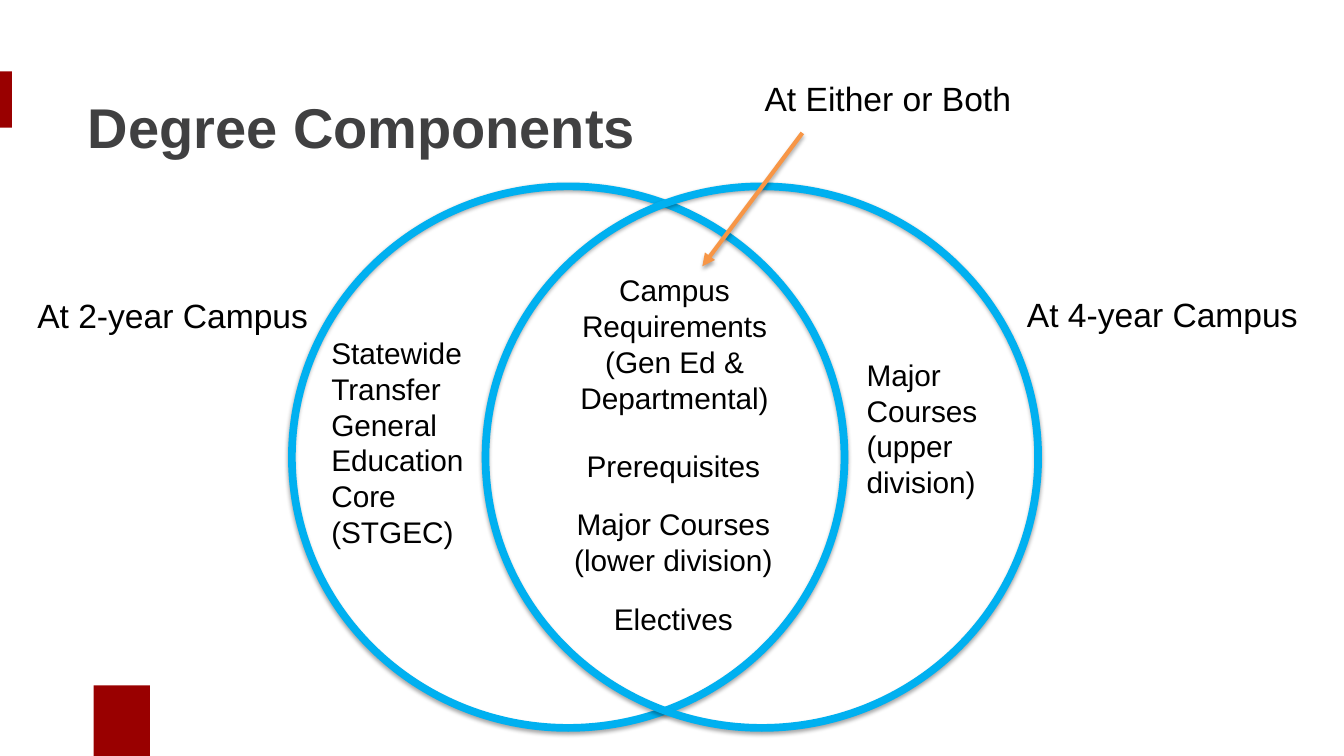
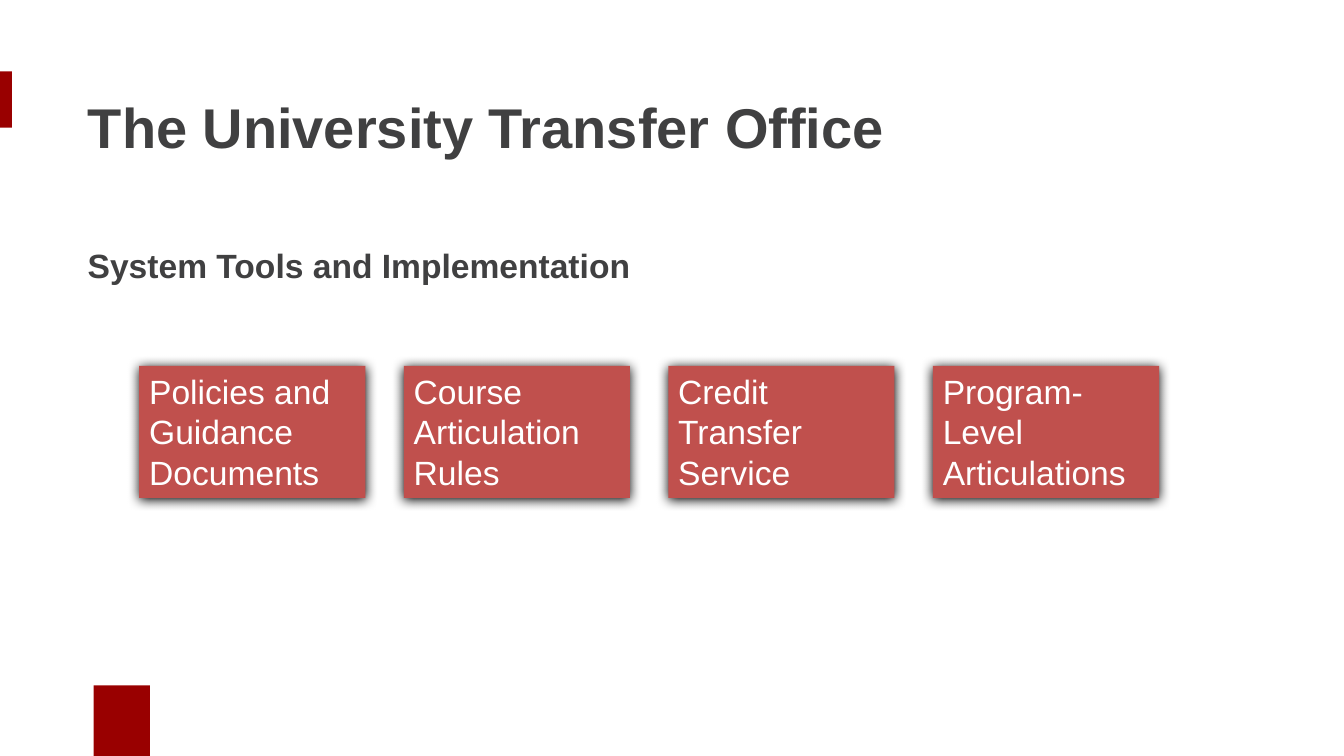
from lxml import etree
from pptx import Presentation
from pptx.dml.color import RGBColor
from pptx.enum import shapes, text
from pptx.oxml import ns
from pptx.util import Cm, Pt

COLORS = {
    "band": "990000",
    "heading": "404041",
    "body": "000000",
    "ring": "00B0F0",
    "arrow": "F79646",
    "tool": "C0504D",
    "tool_text": "FFFFFF",
    "shadow": "000000",
}
FONT = "Arial"
TITLE_ONLY = 5
BODY_SIZE, LABEL_SIZE, TITLE_SIZE = 21.3, 24, 40
SOFT_SHADOW = {"opacity": 35, "blur": 3.1, "distance": 1.8}
STRONG_SHADOW = {"opacity": 100, "blur": 8.5, "distance": 1}


def rgb(name):
    return RGBColor.from_string(COLORS[name])


def add_xml(parent, tag, **attributes):
    values = {key: str(value) for key, value in attributes.items()}
    return etree.SubElement(parent, ns.qn(tag), values)


def cast_shadow(shape, opacity, blur, distance):
    """Add a downward shadow; call after fill and line are set."""
    effects = add_xml(shape.element.spPr, "a:effectLst")
    outer = add_xml(effects, "a:outerShdw", blurRad=Pt(blur), dist=Pt(distance),
                    dir=90 * 60000, rotWithShape=0)
    color = add_xml(outer, "a:srgbClr", val=COLORS["shadow"])
    add_xml(color, "a:alpha", val=opacity * 1000)


def write(frame, content, size, color, bold=False, centered=False, gap=0,
          anchor=text.MSO_ANCHOR.TOP):
    """Set text; paragraphs are split by newlines, with gap points between them."""
    frame.text = content
    frame.auto_size = text.MSO_AUTO_SIZE.NONE
    frame.vertical_anchor = anchor
    for number, paragraph in enumerate(frame.paragraphs):
        paragraph.alignment = text.PP_ALIGN.CENTER if centered else text.PP_ALIGN.LEFT
        paragraph.space_before = Pt(gap if number else 0)
        for run in paragraph.runs:
            run.font.name = FONT
            run.font.size = Pt(size)
            run.font.bold = bold
            run.font.color.rgb = rgb(color)


def add_text(slide, box, content, size=BODY_SIZE, color="body", wrap=True,
             inset=0.25, **style):
    frame = slide.shapes.add_textbox(*map(Cm, box)).text_frame
    frame.word_wrap = wrap
    frame.margin_left = frame.margin_right = Cm(inset)
    write(frame, content, size, color, **style)


def add_solid(slide, kind, box, color):
    shape = slide.shapes.add_shape(kind, *map(Cm, box))
    shape.fill.solid()
    shape.fill.fore_color.rgb = rgb(color)
    shape.line.fill.background()
    return shape


def move_bands_to_layout(slide):
    """Draw the red bands once, on the layout that all slides share."""
    for box in ((0, 1.8, 0.3, 1.42), (2.36, 17.27, 1.42, 1.78)):
        band = add_solid(slide, shapes.MSO_SHAPE.RECTANGLE, box, "band")
        band.shadow.inherit = False
        slide.slide_layout.shapes.element.append(band.element)


def add_titled_slide(deck, heading):
    slide = deck.slides.add_slide(deck.slide_layouts[TITLE_ONLY])
    title = slide.shapes.title
    title.left, title.top, title.width, title.height = map(Cm, (1.96, 1.73, 28.35, 2.9))
    write(title.text_frame, heading, TITLE_SIZE, "heading", bold=True,
          anchor=text.MSO_ANCHOR.MIDDLE)
    return slide


def add_arrow(slide, start, end):
    arrow = slide.shapes.add_connector(shapes.MSO_CONNECTOR.STRAIGHT, *map(Cm, start + end))
    arrow.line.color.rgb = rgb("arrow")
    arrow.line.width = Pt(3)
    add_xml(arrow.element.spPr.find(ns.qn("a:ln")), "a:tailEnd", type="triangle")
    cast_shadow(arrow, **SOFT_SHADOW)


def add_venn(slide, left, top):
    """Two overlapping campus rings with their labels and contents."""
    def at(x, y, *size):
        return (left + x, top + y) + size

    for ring_x in (6.57, 11.45):
        ring = add_solid(slide, shapes.MSO_SHAPE.DONUT, at(ring_x, 2.77, 14.12, 13.84), "ring")
        ring.adjustments[0] = 0.014
        cast_shadow(ring, **SOFT_SHADOW)

    labels = (
        ("At 2-year Campus", at(0, 5.48, 7.42, 1.27)),
        ("At 4-year Campus", at(24.94, 5.46, 7.42, 1.27)),
        ("At Either or Both", at(18.33, 0, 6.78, 1.27)),
    )
    for label, box in labels:
        add_text(slide, box, label, LABEL_SIZE, wrap=False)

    add_text(slide, at(7.41, 6.48, 4.04, 6.45),
             "Statewide Transfer General Education Core (STGEC)")
    add_text(slide, at(20.82, 7.03, 3.76, 4.57), "Major Courses (upper division)", inset=0.33)
    add_text(slide, at(13.58, 4.9, 5.46, 4.57),
             "Campus Requirements (Gen Ed & Departmental)", inset=0.33, centered=True)
    add_text(slide, at(13.31, 9.32, 5.94, 5.1),
             "Prerequisites\nMajor Courses\v(lower division)\nElectives",
             centered=True, gap=16.4)
    add_arrow(slide, at(19.53, 1.52), at(17.01, 4.88))


def add_tool_row(slide, left, top, width, height, tools):
    """Equal cards whose spacing fills the given width."""
    card_width = 5.7
    pitch = (width - card_width) / (len(tools) - 1)
    for column, tool in enumerate(tools):
        card = add_solid(slide, shapes.MSO_SHAPE.RECTANGLE,
                         (left + column * pitch, top, card_width, height), "tool")
        cast_shadow(card, **STRONG_SHADOW)
        write(card.text_frame, tool, LABEL_SIZE, "tool_text")


def main():
    deck = Presentation()
    deck.slide_width, deck.slide_height = Cm(33.87), Cm(19.05)

    components = add_titled_slide(deck, "Degree Components")
    move_bands_to_layout(components)
    add_venn(components, 0.69, 1.83)

    office = add_titled_slide(deck, "The University Transfer Office")
    add_text(office, (1.96, 6.05, 28.52, 1.4), "System Tools and Implementation",
             LABEL_SIZE, "heading", bold=True)
    add_tool_row(office, 3.51, 9.22, 25.7, 3.33, (
        "Policies and Guidance Documents",
        "Course Articulation Rules",
        "Credit Transfer Service",
        "Program-Level Articulations",
    ))
    deck.save("out.pptx")


if __name__ == "__main__":
    main()
